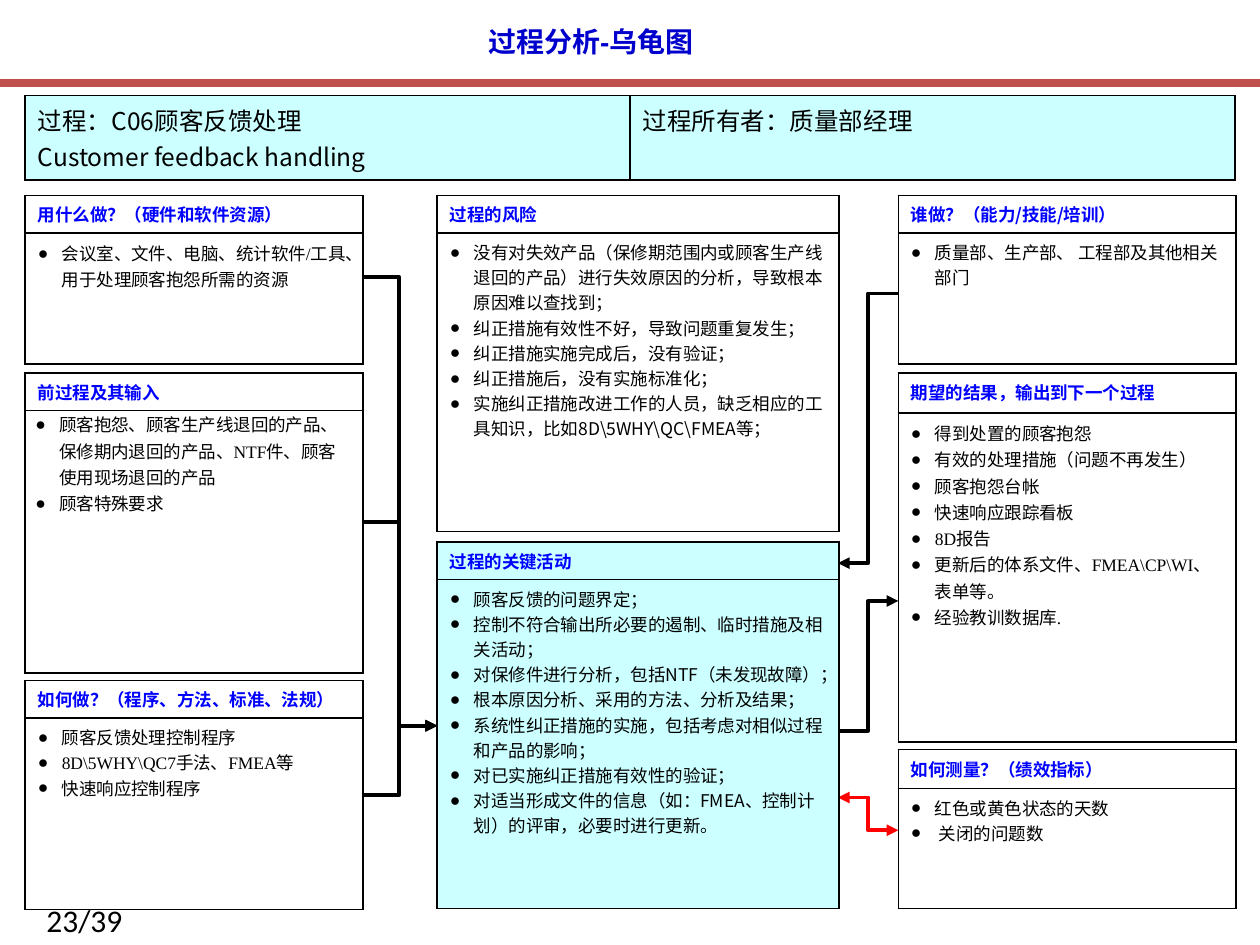
from lxml import etree
from pptx import Presentation
from pptx.dml.color import RGBColor
from pptx.enum.shapes import MSO_CONNECTOR
from pptx.enum.text import MSO_ANCHOR, PP_ALIGN
from pptx.oxml.ns import qn
from pptx.util import Inches, Pt

BLACK = RGBColor(0x00, 0x00, 0x00)
RED = RGBColor(0xFF, 0x00, 0x00)
RULE_RED = RGBColor(0xC0, 0x50, 0x4D)
TITLE_BLUE = RGBColor(0x00, 0x00, 0xCC)
HEAD_BLUE = RGBColor(0x00, 0x00, 0xFF)
CYAN = RGBColor(0xCC, 0xFF, 0xFF)

CJK = "Noto Sans CJK SC"
SERIF = "Times New Roman"
LEFT_X, MID_X, RIGHT_X = 0.2, 3.47, 7.13
MID_END = 6.65
SIDE_W, MID_W = 2.68, 3.19
INSETS = (0.1, 0.05)

# heading, lines, left, top, width, heading height, body height, options
PANELS = [
    ("用什么做？（硬件和软件资源）",
     ["会议室、文件、电脑、统计软件/工具、用于处理顾客抱怨所需的资源"],
     LEFT_X, 1.55, SIDE_W, 0.3, 1.04, {"spacing": 15}),
    ("谁做？（能力/技能/培训）",
     ["质量部、生产部、 工程部及其他相关部门"],
     RIGHT_X, 1.55, SIDE_W, 0.3, 1.04, {}),
    ("前过程及其输入",
     ["顾客抱怨、顾客生产线退回的产品、保修期内退回的产品、NTF件、顾客使用现场退回的产品",
      "顾客特殊要求"],
     LEFT_X, 2.96, SIDE_W, 0.3, 2.08, {"spacing": 15, "insets": (0.08, 0)}),
    ("期望的结果，输出到下一个过程",
     ["得到处置的顾客抱怨", "有效的处理措施（问题不再发生）", "顾客抱怨台帐",
      "快速响应跟踪看板", "8D报告", "更新后的体系文件、FMEA\\CP\\WI、表单等。",
      "经验教训数据库."],
     RIGHT_X, 2.96, SIDE_W, 0.32, 2.61, {"spacing": 15}),
    ("如何做？（程序、方法、标准、法规）",
     ["顾客反馈处理控制程序", "8D\\5WHY\\QC7手法、FMEA等", "快速响应控制程序"],
     LEFT_X, 5.4, SIDE_W, 0.3, 1.52, {}),
    ("如何测量？（绩效指标）",
     ["红色或黄色状态的天数", " 关闭的问题数"],
     RIGHT_X, 5.95, SIDE_W, 0.31, 0.95, {}),
    ("过程的风险",
     ["没有对失效产品（保修期范围内或顾客生产线退回的产品）进行失效原因的分析，导致根本原因难以查找到；",
      "纠正措施有效性不好，导致问题重复发生；", "纠正措施实施完成后，没有验证；",
      "纠正措施后，没有实施标准化；",
      "实施纠正措施改进工作的人员，缺乏相应的工具知识，比如8D\\5WHY\\QC\\FMEA等；"],
     MID_X, 1.55, MID_W, 0.3, 2.37, {"font": CJK}),
    ("过程的关键活动",
     ["顾客反馈的问题界定；", "控制不符合输出所必要的遏制、临时措施及相关活动；",
      "对保修件进行分析，包括NTF（未发现故障）；",
      "根本原因分析、采用的方法、分析及结果；",
      "系统性纠正措施的实施，包括考虑对相似过程和产品的影响；",
      "对已实施纠正措施有效性的验证；",
      "对适当形成文件的信息（如：FMEA、控制计划）的评审，必要时进行更新。"],
     MID_X, 4.3, MID_W, 0.3, 2.61, {"font": CJK, "fill": CYAN}),
]

# start, end, colour, arrowheads
FLOWS = [
    ((2.87, 6.31), (MID_X, 5.76), BLACK, ["tailEnd"]),
    ((2.87, 4.14), (MID_X, 5.76), BLACK, ["tailEnd"]),
    ((2.87, 2.2), (MID_X, 5.76), BLACK, ["tailEnd"]),
    ((MID_END, 5.8), (RIGHT_X, 4.77), BLACK, ["tailEnd"]),
    ((MID_END, 6.33), (RIGHT_X, 6.59), RED, ["headEnd", "tailEnd"]),
    ((MID_END, 4.47), (RIGHT_X, 2.33), BLACK, ["headEnd"]),
]


def format_text(p, size, font, color, bold=False):
    for r in p.runs:
        r.font.size = Pt(size)
        r.font.bold = bold
        r.font.name = font
        r.font.color.rgb = color
        ea = etree.Element(qn("a:ea"), typeface=CJK)
        r.font._element.find(qn("a:latin")).addnext(ea)


def add_bullet(p):
    pPr = p._p.get_or_add_pPr()
    pPr.set("marL", str(Inches(0.19)))
    pPr.set("indent", str(-Inches(0.19)))
    etree.SubElement(pPr, qn("a:buFont"), typeface="Arial")
    etree.SubElement(pPr, qn("a:buChar"), char="●")


def add_connector(s, kind, start, end, color, width, heads=()):
    line = s.shapes.add_connector(kind, *map(Inches, start + end))
    line.line.color.rgb = color
    line.line.width = Pt(width)
    for head in heads:
        etree.SubElement(line.line._ln, qn(f"a:{head}"), type="triangle")
    etree.SubElement(line._element.spPr, qn("a:effectLst"))


def add_textbox(s, text, box, size, font, color, bold=False):
    tf = s.shapes.add_textbox(*map(Inches, box)).text_frame
    tf.word_wrap = True
    tf.text = text
    format_text(tf.paragraphs[0], size, font, color, bold)
    return tf


def style_cell(cell, text, fill=None, insets=INSETS):
    """Write the text and set margins, black borders and fill."""
    cell.text = text
    cell.margin_left = cell.margin_right = Inches(insets[0])
    cell.margin_top = cell.margin_bottom = Inches(insets[1])
    tcPr = cell._tc.get_or_add_tcPr()
    for side in ("lnL", "lnR", "lnT", "lnB"):
        ln = etree.SubElement(tcPr, qn(f"a:{side}"), w=str(Pt(1)))
        solid = etree.SubElement(ln, qn("a:solidFill"))
        etree.SubElement(solid, qn("a:srgbClr"), val=str(BLACK))
    if fill is None:
        cell.fill.background()
    else:
        cell.fill.solid()
        cell.fill.fore_color.rgb = fill


def add_table(s, left, top, widths, heights):
    box = map(Inches, (left, top, sum(widths), sum(heights)))
    table = s.shapes.add_table(len(heights), len(widths), *box).table
    table.first_row = table.horz_banding = False
    for col, width in zip(table.columns, widths):
        col.width = Inches(width)
    for row, height in zip(table.rows, heights):
        row.height = Inches(height)
    return table


def add_process_header(s):
    table = add_table(s, LEFT_X, 0.76, [4.8, 4.8], [0.67])
    texts = ("过程：C06顾客反馈处理\nCustomer feedback handling", "过程所有者：质量部经理")
    for col, text in enumerate(texts):
        cell = table.cell(0, col)
        style_cell(cell, text, CYAN)
        for p in cell.text_frame.paragraphs:
            format_text(p, 14, CJK, BLACK)


def add_panel(s, heading, lines, left, top, width, head_h, body_h,
              font=SERIF, fill=None, spacing=None, insets=INSETS):
    table = add_table(s, left, top, [width], [head_h, body_h])
    head, body = table.cell(0, 0), table.cell(1, 0)
    style_cell(head, heading, fill)
    format_text(head.text_frame.paragraphs[0], 10, CJK, HEAD_BLUE, True)
    style_cell(body, "\n".join(lines), fill, insets)
    for p in body.text_frame.paragraphs:
        if spacing:
            p.line_spacing = Pt(spacing)
        add_bullet(p)
        format_text(p, 10, font, BLACK)


def main():
    prs = Presentation()
    prs.slide_width, prs.slide_height = Inches(10), Inches(7.5)
    s = prs.slides.add_slide(prs.slide_layouts[6])

    add_connector(s, MSO_CONNECTOR.STRAIGHT, (0, 0.66), (10, 0.66), RULE_RED, 4.5)
    tf = add_textbox(s, "过程分析-乌龟图", (2.09, 0.13, 5.2, 0.39),
                     16, "Arial", TITLE_BLUE, True)
    tf.vertical_anchor = MSO_ANCHOR.MIDDLE
    tf.paragraphs[0].alignment = PP_ALIGN.CENTER

    for start, end, color, heads in FLOWS:
        add_connector(s, MSO_CONNECTOR.ELBOW, start, end, color, 2.25, heads)
    add_process_header(s)
    for *panel, options in PANELS:
        add_panel(s, *panel, **options)

    add_textbox(s, "23/39", (0.27, 7.1, 0.95, 0.4), 18, "Calibri", BLACK)
    prs.save("out.pptx")


if __name__ == "__main__":
    main()
